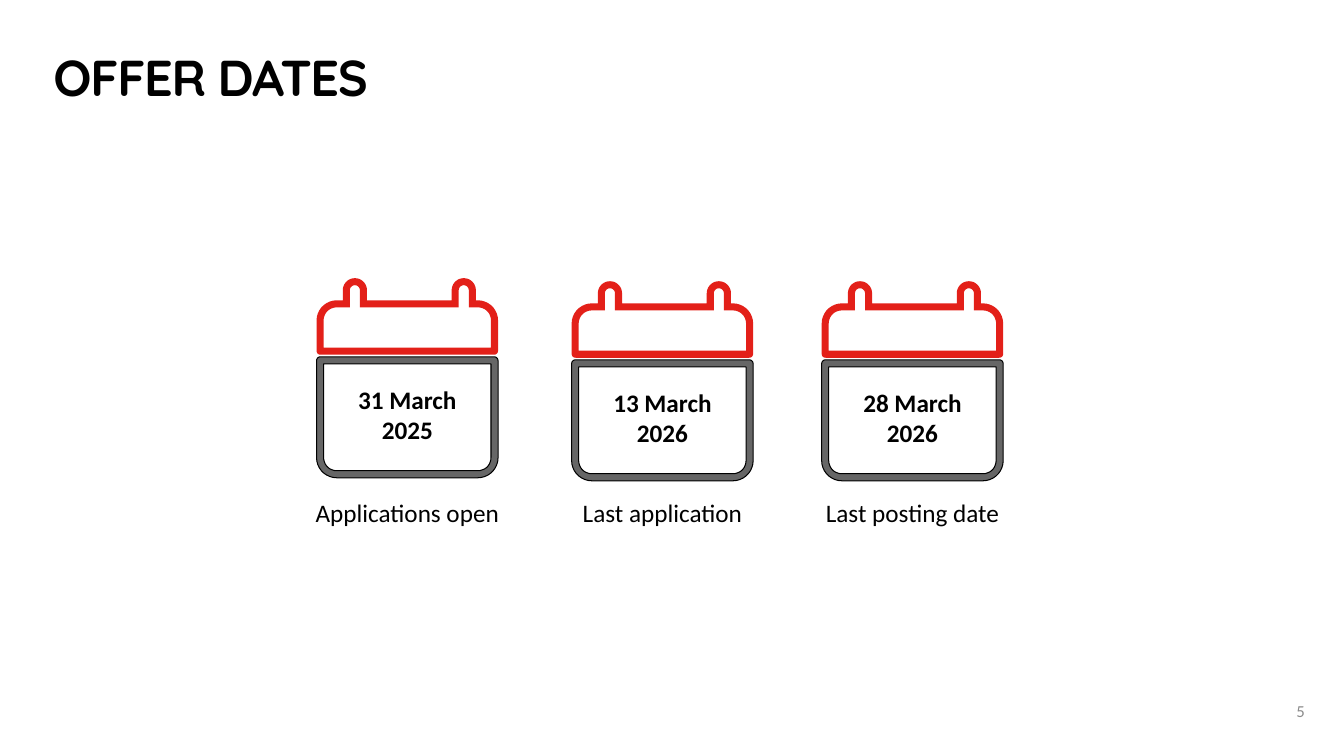
import math

import pptx
import pptx.dml.color
import pptx.enum.text
import pptx.util

Inches, Pt = pptx.util.Inches, pptx.util.Pt
RGB = pptx.dml.color.RGBColor
ALIGN = pptx.enum.text.PP_ALIGN
ANCHOR = pptx.enum.text.MSO_ANCHOR
AUTO = pptx.enum.text.MSO_AUTO_SIZE

COLORS = {"text": "000000", "number": "8C8C8C", "header": "E32019", "body": "666666"}
UNITS = 1000
WIDTH, HEADER_H, BODY_TOP, BODY_H = 1.8, 0.76, 0.78, 1.2
STROKE = 0.07
TABS = (0.38, 1.46)
LABEL_TOP = 4.88
CALENDARS = [
    (3.14, 2.76, ["31 March", "2025"], "Applications open", 2.04),
    (5.67, 2.79, ["13 March", "2026"], "Last application", 1.8),
    (8.15, 2.79, ["28 March", "2026"], "Last posting date", 1.94),
]


def add_text(slide, box, lines, color="text", align=ALIGN.CENTER, frame=None, para=None, **font):
    """Add a text box with one paragraph per line and return its paragraphs."""
    tf = slide.shapes.add_textbox(*map(Inches, box)).text_frame
    for name, value in (frame or {}).items():
        setattr(tf, name, value)
    for i, line in enumerate(lines):
        p = tf.paragraphs[0] if i == 0 else tf.add_paragraph()
        for name, value in {"alignment": align, **(para or {})}.items():
            setattr(p, name, value)
        r = p.add_run()
        r.text = line
        for name, value in {"name": "Calibri", "size": Pt(18), **font}.items():
            setattr(r.font, name, value)
        r.font.color.rgb = RGB.from_string(COLORS[color])
    return tf.paragraphs


def arc(cx, cy, radius, start, sweep):
    """Return points along a clockwise arc, with angles in degrees."""
    steps = sweep // 10
    angles = [math.radians(start + sweep * i / steps) for i in range(steps + 1)]
    return [(cx + radius * math.cos(a), cy + radius * math.sin(a)) for a in angles]


def outline(inset, top, bottom, top_r, bottom_r, tabs):
    """Return a rounded outline with tabs on its top edge, shrunk by inset."""
    tr, br = max(top_r - inset, 0), max(bottom_r - inset, 0)
    left, right, y0, y1 = inset, WIDTH - inset, top + inset, bottom - inset
    points = arc(left + tr, y0 + tr, tr, 180, 90)
    for x in tabs:
        half = 0.12 - inset
        points += [(x - half, y0), *arc(x, 0.12, half, 180, 180), (x + half, y0)]
    points += arc(right - tr, y0 + tr, tr, 270, 90)
    points += arc(right - br, y1 - br, br, 0, 90)
    return points + arc(left + br, y1 - br, br, 90, 90)


def add_ring(shapes, left, top, color, *form):
    """Draw the band between the outer and the inner outline."""
    outer, inner = ([(x * UNITS, y * UNITS) for x, y in outline(d, *form)] for d in (0, STROKE))
    fb = shapes.build_freeform(*outer[0], scale=Inches(1) / UNITS)
    fb.add_line_segments(outer[1:], close=True)
    fb.move_to(*inner[0])
    fb.add_line_segments(inner[1:], close=True)
    sp = fb.convert_to_shape(Inches(left), Inches(top))
    sp.shadow.inherit = False
    sp.fill.solid()
    sp.fill.fore_color.rgb = RGB.from_string(COLORS[color])
    return sp


def add_calendar(slide, left, top, date, label, label_w):
    """Draw a calendar with its date inside and its label below."""
    shapes = slide.shapes.add_group_shape().shapes
    header = add_ring(shapes, left, top, "header", 0.22, HEADER_H, 0.2, 0.04, TABS)
    header.line.fill.background()
    body = add_ring(shapes, left, top + BODY_TOP, "body", 0, BODY_H, 0.04, 0.2, ())
    body.line.color.rgb = RGB.from_string(COLORS["text"])
    body.line.width = Pt(0.75)
    center = left + WIDTH / 2
    grow = {"word_wrap": False, "auto_size": AUTO.SHAPE_TO_FIT_TEXT}
    add_text(slide, (center - 0.595, top + 1, 1.19, 0.71), date, frame=grow, bold=True)
    add_text(slide, (center - label_w / 2, LABEL_TOP, label_w, 0.4), [label], frame=grow)


def add_title(slide, box, text):
    """Place the slide title in its box."""
    margins = {f"margin_{side}": 0 for side in ("left", "top", "right", "bottom")}
    p = add_text(slide, box, [text], align=ALIGN.LEFT, frame={"word_wrap": True, **margins},
                 para={"line_spacing": Pt(44)}, name="Quicksand", size=Pt(36), bold=True)[0]
    p.runs[0].font._element.set("spc", "-100")


def add_number(slide, box, number):
    """Place the slide number in its box."""
    add_text(slide, box, [number], "number", ALIGN.RIGHT, size=Pt(12),
             frame={"word_wrap": True, "vertical_anchor": ANCHOR.MIDDLE})


def main():
    """Build and save the offer dates slide."""
    prs = pptx.Presentation()
    prs.slide_width, prs.slide_height = Inches(13.33), Inches(7.5)
    s = prs.slides.add_slide(prs.slide_layouts[6])
    add_title(s, (0.53, 0.45, 11.01, 0.52), "OFFER DATES")
    for calendar in CALENDARS:
        add_calendar(s, *calendar)
    add_number(s, (12.63, 6.85, 0.41, 0.4), "5")
    prs.save("out.pptx")


if __name__ == "__main__":
    main()
